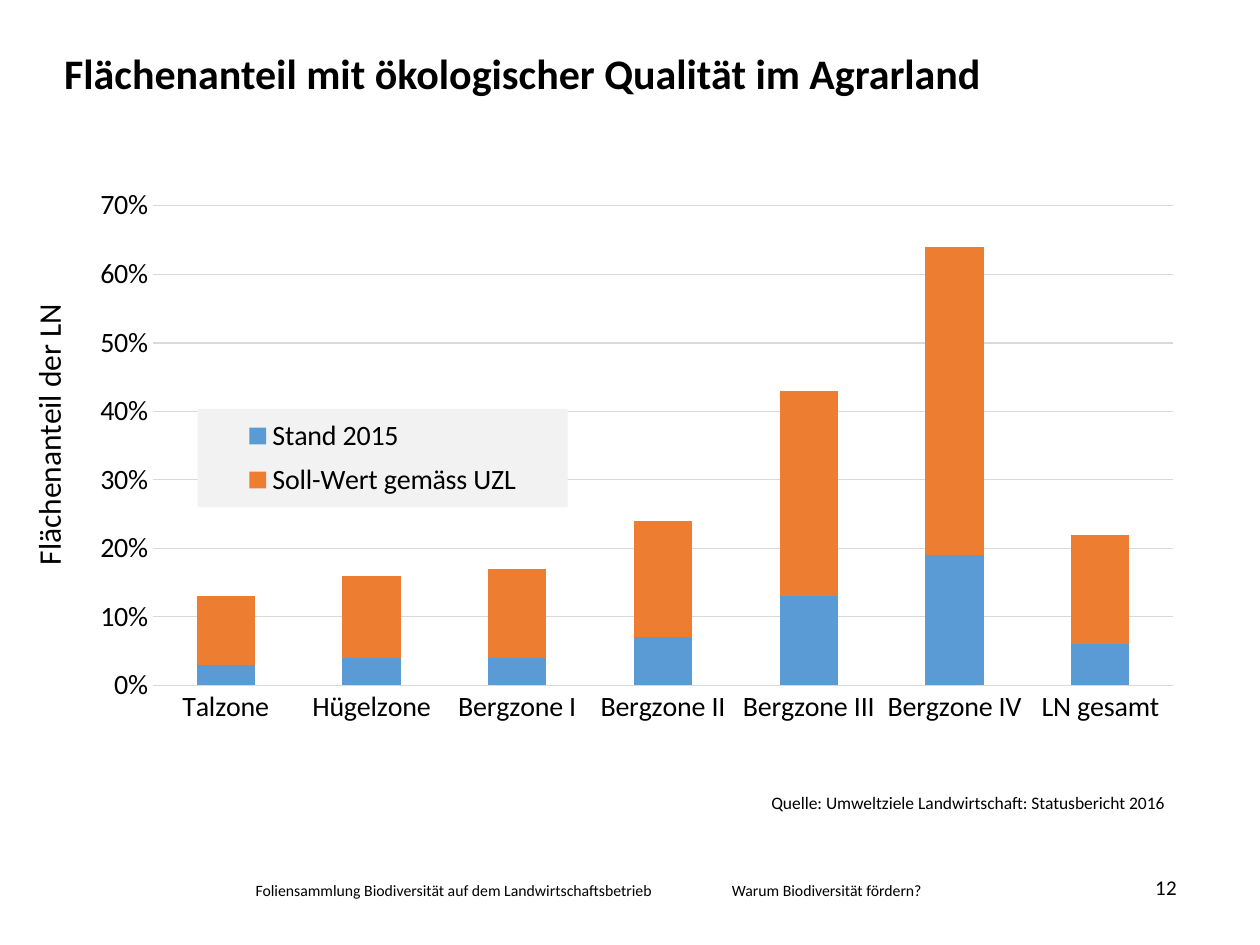
from dataclasses import dataclass

from lxml import etree
from pptx import Presentation
from pptx.chart.data import CategoryChartData
from pptx.dml.color import RGBColor
from pptx.enum.chart import XL_CHART_TYPE, XL_LEGEND_POSITION, XL_TICK_MARK
from pptx.enum.text import MSO_ANCHOR, PP_ALIGN
from pptx.oxml import parse_xml
from pptx.oxml.ns import nsdecls, qn
from pptx.util import Inches, Pt

STACKED = XL_CHART_TYPE.COLUMN_STACKED
LEGEND_BOTTOM = XL_LEGEND_POSITION.BOTTOM
NO_TICK = XL_TICK_MARK.NONE
TOP, BOTTOM = MSO_ANCHOR.TOP, MSO_ANCHOR.BOTTOM
LEFT, RIGHT = PP_ALIGN.LEFT, PP_ALIGN.RIGHT


@dataclass(frozen=True)
class Theme:
    font: str = "Calibri"
    text: str = "000000"
    grid: str = "D9D9D9"
    legend: str = "F2F2F2"
    actual: str = "5B9BD5"
    target: str = "ED7D31"
    title_size: int = 24
    axis_title_size: int = 18
    chart_size: int = 16
    number_size: int = 12
    source_size: int = 10
    footer_size: int = 9


THEME = Theme()

# Slide grid: 100 columns by 75 rows of square cells
SLIDE_WIDTH, SLIDE_HEIGHT = Inches(10), Inches(7.5)
COLUMNS, ROWS = 100, 75

ZONES = ["Talzone", "Hügelzone", "Bergzone I", "Bergzone II",
         "Bergzone III", "Bergzone IV", "LN gesamt"]
SHARES = [
    ("Stand 2015", [0.03, 0.04, 0.04, 0.07, 0.13, 0.19, 0.06], THEME.actual),
    ("Soll-Wert gemäss UZL", [0.1, 0.12, 0.13, 0.17, 0.3, 0.45, 0.16], THEME.target),
]


def cells(column, row, width, height):
    """Turn grid columns and rows into slide lengths."""
    cell_width, cell_height = SLIDE_WIDTH / COLUMNS, SLIDE_HEIGHT / ROWS
    return (int(column * cell_width), int(row * cell_height),
            int(width * cell_width), int(height * cell_height))


def color(value):
    return RGBColor.from_string(value)


def style_font(font, size, bold=False):
    font.name = THEME.font
    font.size = Pt(size)
    font.bold = bold
    font.color.rgb = color(THEME.text)


def add_text(slide, text, place, size, bold=False, align=LEFT, anchor=TOP,
             insets=(0.1, 0.05), line_spacing=None, rotation=0, wrap=True, tracking=0):
    box = slide.shapes.add_textbox(*cells(*place))
    box.rotation = rotation
    frame = box.text_frame
    frame.word_wrap = wrap
    frame.vertical_anchor = anchor
    frame.margin_left = frame.margin_right = Inches(insets[0])
    frame.margin_top = frame.margin_bottom = Inches(insets[1])
    paragraph = frame.paragraphs[0]
    paragraph.alignment = align
    paragraph.line_spacing = line_spacing
    run = paragraph.add_run()
    run.text = text
    style_font(run.font, size, bold)
    if tracking:
        run.font._element.set("spc", str(int(tracking * 100)))


def chart_layout(x, y, width, height, inner=False):
    """Manual layout given as shares of the chart's size."""
    layout = etree.Element(qn("c:layout"))
    manual = etree.SubElement(layout, qn("c:manualLayout"))
    settings = [("layoutTarget", "inner")] if inner else []
    settings += [("xMode", "edge"), ("yMode", "edge"),
                 ("x", x), ("y", y), ("w", width), ("h", height)]
    for tag, value in settings:
        etree.SubElement(manual, qn(f"c:{tag}")).set("val", str(value))
    return layout


def style_line(line):
    line.color.rgb = color(THEME.grid)
    line.width = Pt(0.75)


def style_axes(chart):
    zone_axis, share_axis = chart.category_axis, chart.value_axis
    for axis in (zone_axis, share_axis):
        axis.major_tick_mark = axis.minor_tick_mark = NO_TICK
        style_font(axis.tick_labels.font, THEME.chart_size)
    style_line(zone_axis.format.line)
    share_axis.format.line.fill.background()
    share_axis.has_major_gridlines = True
    style_line(share_axis.major_gridlines.format.line)
    share_axis.minimum_scale, share_axis.maximum_scale = 0, 0.7
    share_axis.major_unit = 0.1
    share_axis.tick_labels.number_format = "0%"
    share_axis.tick_labels.number_format_is_linked = False


def style_legend(chart):
    chart.has_legend = True
    legend = chart.legend
    legend.position = LEGEND_BOTTOM
    legend.include_in_layout = False
    style_font(legend.font, THEME.chart_size)
    overlay = legend._element.find(qn("c:overlay"))
    overlay.addprevious(chart_layout(0.11, 0.38, 0.33, 0.16))
    overlay.addnext(parse_xml(
        f'<c:spPr {nsdecls("c", "a")}><a:solidFill>'
        f'<a:srgbClr val="{THEME.legend}"/></a:solidFill></c:spPr>'))


def add_share_chart(slide, place):
    data = CategoryChartData(number_format="0%")
    data.categories = ZONES
    for name, values, _ in SHARES:
        data.add_series(name, values)
    chart = slide.shapes.add_chart(STACKED, *cells(*place), data).chart
    chart.has_title = False
    style_font(chart.font, THEME.chart_size)

    # Columns
    plot = chart.plots[0]
    plot.gap_width, plot.overlap = 150, 100
    plot.vary_by_categories = False
    for series, (_, _, fill) in zip(plot.series, SHARES):
        series.format.fill.solid()
        series.format.fill.fore_color.rgb = color(fill)

    # Plot area, axes and legend
    plot_area = plot._element.getparent()
    for layout in plot_area.findall(qn("c:layout")):
        plot_area.remove(layout)
    plot_area.insert(0, chart_layout(0.07, 0.05, 0.91, 0.78, inner=True))
    style_axes(chart)
    style_legend(chart)


def main():
    deck = Presentation()
    deck.slide_width, deck.slide_height = SLIDE_WIDTH, SLIDE_HEIGHT
    slide = deck.slides.add_slide(deck.slide_layouts[6])

    # Footer
    add_text(slide, "Foliensammlung Biodiversität auf dem Landwirtschaftsbetrieb",
             (19.3, 69.4, 34.6, 2.5), THEME.footer_size)
    add_text(slide, "Warum Biodiversität fördern?",
             (57.1, 69.4, 22.8, 2.5), THEME.footer_size)

    # Title
    add_text(slide, "Flächenanteil mit ökologischer Qualität im Agrarland",
             (5.1, 4.2, 91.3, 6.9), THEME.title_size, bold=True,
             insets=(0, 0), line_spacing=0.9)

    # Chart with its source, page number and axis title
    add_share_chart(slide, (5.9, 13.9, 89, 48.8))
    add_text(slide, "Quelle: Umweltziele Landwirtschaft: Statusbericht 2016",
             (54.8, 62.4, 38.6, 2.7), THEME.source_size, align=RIGHT)
    add_text(slide, "12", (84.7, 68, 8.7, 3.9), THEME.number_size, align=RIGHT,
             anchor=BOTTOM, insets=(0, 0.05), tracking=0.2)
    add_text(slide, "Flächenanteil der LN", (-7.8, 32.2, 23.3, 4),
             THEME.axis_title_size, rotation=270, wrap=False)

    deck.save("out.pptx")


if __name__ == "__main__":
    main()
